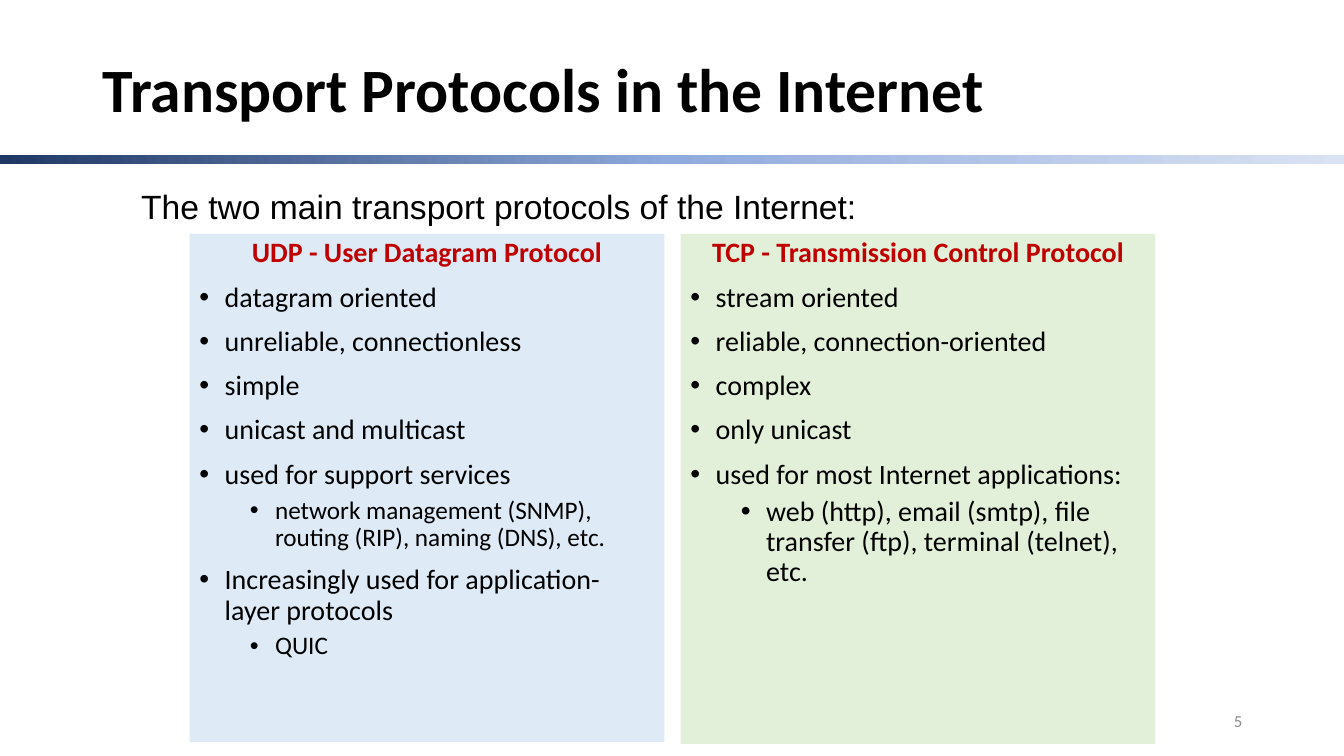
import copy

import pptx
import pptx.dml.color
import pptx.enum.shapes
import pptx.enum.text
import pptx.oxml
import pptx.oxml.ns
import pptx.util

Inches = pptx.util.Inches
Pt = pptx.util.Pt
RGBColor = pptx.dml.color.RGBColor
Align = pptx.enum.text.PP_ALIGN
Anchor = pptx.enum.text.MSO_ANCHOR
RECTANGLE = pptx.enum.shapes.MSO_SHAPE.RECTANGLE

BLACK = RGBColor(0x00, 0x00, 0x00)
RED = RGBColor(0xC0, 0x00, 0x00)
GRAY = RGBColor(0x8C, 0x8C, 0x8C)
PALE_BLUE = RGBColor(0xDE, 0xEB, 0xF7)
PALE_GREEN = RGBColor(0xE2, 0xF0, 0xD9)
BAND_COLORS = [
    RGBColor(0x20, 0x38, 0x64),
    RGBColor(0x8F, 0xAA, 0xDC),
    RGBColor(0xDA, 0xE3, 0xF3),
]

PROTOCOLS = [
    (1.88, 5.04, PALE_BLUE, "UDP - User Datagram Protocol", [
        (0, 20, "datagram oriented"),
        (0, 20, "unreliable, connectionless"),
        (0, 20, "simple"),
        (0, 20, "unicast and multicast"),
        (0, 20, "used for support services"),
        (1, 18, "network management (SNMP), routing (RIP), naming (DNS), etc."),
        (0, 20, "Increasingly used for application-layer protocols"),
        (1, 18, "QUIC"),
    ]),
    (6.75, 5.06, PALE_GREEN, "TCP - Transmission Control Protocol", [
        (0, 20, "stream oriented"),
        (0, 20, "reliable, connection-oriented"),
        (0, 20, "complex"),
        (0, 20, "only unicast"),
        (0, 20, "used for most Internet applications:"),
        (1, 20, "web (http), email (smtp), file transfer (ftp), terminal (telnet), etc."),
    ]),
]


def set_font(paragraph, size, color, name="Calibri", bold=False):
    paragraph.font.name = name
    paragraph.font.size = Pt(size)
    paragraph.font.bold = bold
    paragraph.font.color.rgb = color


def set_list_format(paragraph, level, bullet):
    paragraph.level = level
    paragraph.line_spacing = 0.9
    paragraph.space_before = Pt(5 if level else 10)
    properties = paragraph._p.get_or_add_pPr()
    properties.set("marL", str(Inches(0.25 + 0.5 * level)))
    properties.set("indent", str(Inches(-0.25)))
    if bullet:
        namespace = pptx.oxml.ns.nsdecls("a")
        properties.append(pptx.oxml.parse_xml(f'<a:buFont {namespace} typeface="Arial"/>'))
        properties.append(pptx.oxml.parse_xml(f'<a:buChar {namespace} char="•"/>'))


presentation = pptx.Presentation()
presentation.slide_width = Inches(13.33)
presentation.slide_height = Inches(7.5)
slide = presentation.slides.add_slide(presentation.slide_layouts[5])

band = slide.shapes.add_shape(RECTANGLE, 0, Inches(1.54), Inches(13.33), Inches(0.09))
band.shadow.inherit = False
band.line.fill.background()
band.fill.gradient()
band.fill.gradient_angle = 0
first_stop = band.fill._fill._gradFill.gsLst[0]
first_stop.addnext(copy.deepcopy(first_stop))
for index, (stop, color) in enumerate(zip(band.fill.gradient_stops, BAND_COLORS)):
    stop.position = index / 2
    stop.color.rgb = color

title = slide.shapes.title
title.left, title.top = Inches(0.92), Inches(0.4)
title.width, title.height = Inches(11.5), Inches(1.04)
title.text_frame.text = "Transport Protocols in the Internet"
title.text_frame.vertical_anchor = Anchor.MIDDLE
paragraph = title.text_frame.paragraphs[0]
paragraph.alignment = Align.LEFT
paragraph.line_spacing = 0.9
set_font(paragraph, 44, BLACK, bold=True)

for left, height, color, heading, items in PROTOCOLS:
    panel = slide.shapes.add_shape(RECTANGLE, Inches(left), Inches(2.32), Inches(4.71), Inches(height))
    panel.shadow.inherit = False
    panel.fill.solid()
    panel.fill.fore_color.rgb = color
    panel.line.fill.background()
    frame = panel.text_frame
    frame.word_wrap = True
    frame.vertical_anchor = Anchor.TOP
    paragraph = frame.paragraphs[0]
    paragraph.text = heading
    paragraph.alignment = Align.CENTER
    set_list_format(paragraph, 0, False)
    set_font(paragraph, 20, RED, bold=True)
    for level, size, text in items:
        paragraph = frame.add_paragraph()
        paragraph.text = text
        paragraph.alignment = Align.LEFT
        set_list_format(paragraph, level, True)
        set_font(paragraph, size, BLACK)

intro = slide.shapes.add_textbox(Inches(1.21), Inches(1.8), Inches(9.67), Inches(0.5))
intro.text_frame.word_wrap = True
intro.text_frame.margin_left = Inches(0.19)
paragraph = intro.text_frame.paragraphs[0]
paragraph.text = "The two main transport protocols of the Internet:"
set_font(paragraph, 24, BLACK, name="Arial")

page_number = slide.shapes.add_textbox(Inches(9.42), Inches(6.95), Inches(3), Inches(0.4))
page_number.text_frame.word_wrap = True
page_number.text_frame.vertical_anchor = Anchor.MIDDLE
paragraph = page_number.text_frame.paragraphs[0]
paragraph.text = "5"
paragraph.alignment = Align.RIGHT
set_font(paragraph, 12, GRAY)

presentation.save("out.pptx")
